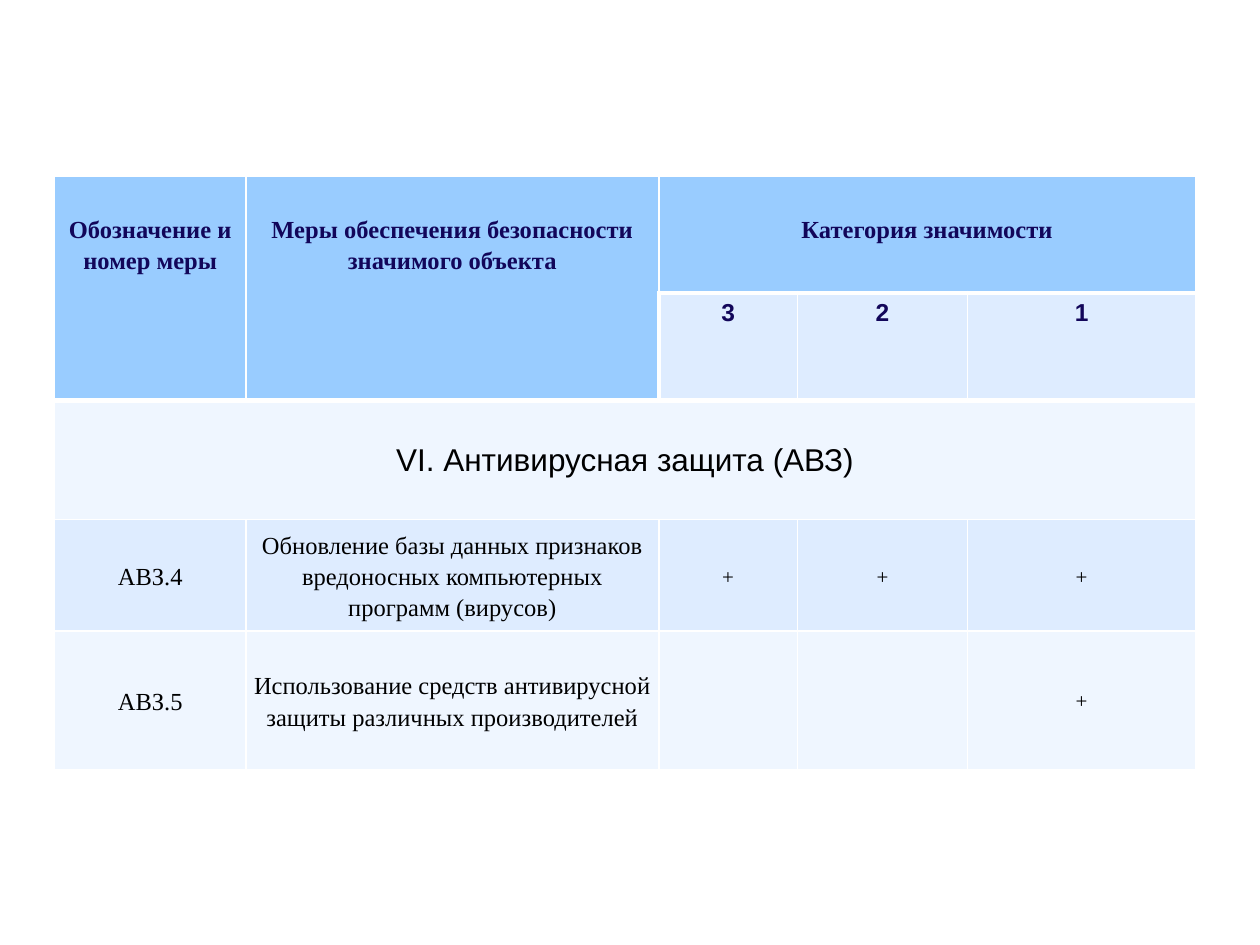
from dataclasses import dataclass

from lxml import etree
from pptx import Presentation
from pptx import util as u
from pptx.dml.color import RGBColor
from pptx.enum import text
from pptx.oxml.ns import qn

COLORS = {
    "header": "99CCFF",
    "band": "DEECFF",
    "light": "EFF6FF",
    "border": "FFFFFF",
    "navy": "12065A",
    "black": "000000",
}
SERIF, SANS = "Times New Roman", "Arial"
COLUMNS = (109.25, 236, 79.25, 97.25, 130.25)
ROWS = (67, 61, 68, 63.5, 79.25)
LEFT, TOP = 31.25, 100.5
THIN, THICK = 1, 3


@dataclass
class Entry:
    row: int
    column: int
    words: str
    style: str
    rows: int = 1
    columns: int = 1


# Text formats; the top inset sets how far down top-anchored text starts
MIDDLE = text.MSO_ANCHOR.MIDDLE
STYLES = {
    "heading": dict(font=SERIF, size=14, color="navy", bold=True, spacing=1.15, inset=(3, 21)),
    "category": dict(font=SANS, size=14, color="navy", bold=True),
    "section": dict(font=SANS, size=18, inset=(7.2, 24.3)),
    "measure": dict(font=SERIF, size=14, spacing=1.15, inset=(3, 5), anchor=MIDDLE),
    "mark": dict(font=SERIF, size=12, spacing=1.15, inset=(3, 5), anchor=MIDDLE),
}

ENTRIES = [
    Entry(0, 0, "Обозначение и номер меры", "heading", rows=2),
    Entry(0, 1, "Меры обеспечения безопасности значимого объекта", "heading", rows=2),
    Entry(0, 2, "Категория значимости", "heading", columns=3),
    *(Entry(1, 2 + i, number, "category") for i, number in enumerate("321")),
    Entry(2, 0, "VI. Антивирусная защита (АВЗ)", "section", columns=5),
    Entry(3, 0, "АВЗ.4", "measure"),
    Entry(3, 1, "Обновление базы данных признаков вредоносных компьютерных "
                "программ (вирусов)", "measure"),
    *(Entry(3, column, "+", "mark") for column in (2, 3, 4)),
    Entry(4, 0, "АВЗ.5", "measure"),
    Entry(4, 1, "Использование средств антивирусной защиты различных "
                "производителей", "measure"),
    Entry(4, 4, "+", "mark"),
]


def write_text(cell, words: str, *, font: str, size: float, color: str = "black",
               bold: bool = False, spacing: float = 1.0,
               inset: tuple = (7.2, 3.6), anchor=text.MSO_ANCHOR.TOP) -> None:
    side, top = inset
    cell.margin_left = cell.margin_right = u.Pt(side)
    cell.margin_top = u.Pt(top)
    cell.margin_bottom = u.Pt(min(top, 5))
    cell.vertical_anchor = anchor
    para = cell.text_frame.paragraphs[0]
    para.alignment = text.PP_ALIGN.CENTER
    para.line_spacing = spacing
    span = para.add_run()
    span.text = words
    span.font.name = font
    span.font.size = u.Pt(size)
    span.font.bold = bold
    span.font.color.rgb = RGBColor.from_string(COLORS[color])


def draw_borders(cell, widths: dict[str, float]) -> None:
    properties = cell._tc.get_or_add_tcPr()
    for side, width in widths.items():
        line = etree.SubElement(properties, qn(f"a:ln{side}"), w=str(u.Pt(width)))
        fill = etree.SubElement(line, qn("a:solidFill"))
        etree.SubElement(fill, qn("a:srgbClr"), val=COLORS["border"])


def border_widths(row: int, column: int) -> dict[str, float]:
    """Thick rules close the header and frame the category numbers."""
    def horizontal(edge: int) -> float:
        return THICK if edge == 2 or (edge == 1 and column >= 2) else THIN

    def vertical(edge: int) -> float:
        return THICK if row == 1 and edge == 2 else THIN

    return {"L": vertical(column), "R": vertical(column + 1),
            "T": horizontal(row), "B": horizontal(row + 1)}


def cell_color(row: int, column: int) -> str:
    if row == 0 or (row == 1 and column < 2):
        return COLORS["header"]
    return COLORS["band" if row % 2 else "light"]


def draw_table(page) -> None:
    frame = page.shapes.add_table(len(ROWS), len(COLUMNS), u.Pt(LEFT), u.Pt(TOP),
                                  u.Pt(sum(COLUMNS)), u.Pt(sum(ROWS)))
    table = frame.table
    table.first_row = table.horz_banding = False
    for column, width in zip(table.columns, COLUMNS):
        column.width = u.Pt(width)
    for row, height in zip(table.rows, ROWS):
        row.height = u.Pt(height)

    # Borders and fills
    for row in range(len(ROWS)):
        for column in range(len(COLUMNS)):
            cell = table.cell(row, column)
            draw_borders(cell, border_widths(row, column))
            cell.fill.solid()
            cell.fill.fore_color.rgb = RGBColor.from_string(cell_color(row, column))

    # Merged areas and text
    for entry in ENTRIES:
        cell = table.cell(entry.row, entry.column)
        if entry.rows * entry.columns > 1:
            cell.merge(table.cell(entry.row + entry.rows - 1,
                                  entry.column + entry.columns - 1))
        write_text(cell, entry.words, **STYLES[entry.style])


def main() -> None:
    deck = Presentation()
    deck.slide_width, deck.slide_height = u.Pt(720), u.Pt(540)
    page = deck.slides.add_slide(deck.slide_layouts[6])
    draw_table(page)
    deck.save("out.pptx")


if __name__ == "__main__":
    main()
